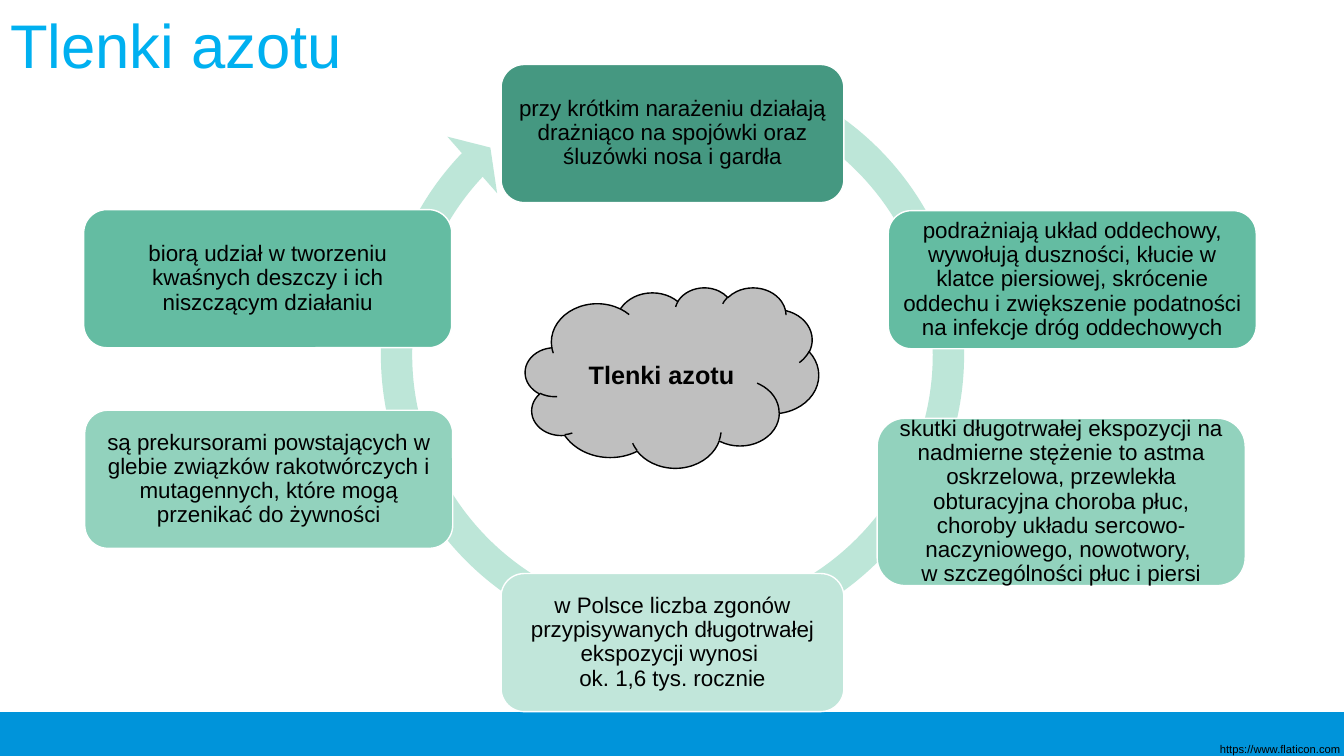
"""Build the slide on the effects of nitrogen oxides."""
import pptx
import pptx.dml.color
import pptx.enum.shapes
import pptx.enum.text
import pptx.util

Inches = pptx.util.Inches
Pt = pptx.util.Pt
RGBColor = pptx.dml.color.RGBColor
MSO_SHAPE = pptx.enum.shapes.MSO_SHAPE
MSO_ANCHOR = pptx.enum.text.MSO_ANCHOR
MSO_AUTO_SIZE = pptx.enum.text.MSO_AUTO_SIZE
PP_ALIGN = pptx.enum.text.PP_ALIGN

BLACK = RGBColor(0x00, 0x00, 0x00)
WHITE = RGBColor(0xFF, 0xFF, 0xFF)
TITLE_BLUE = RGBColor(0x00, 0xB0, 0xF0)
FOOTER_BLUE = RGBColor(0x00, 0x94, 0xDA)
CLOUD_GREY = RGBColor(0xBF, 0xBF, 0xBF)
ARROW_GREEN = RGBColor(0xBD, 0xE6, 0xD8)
GREEN_1 = RGBColor(0x45, 0x98, 0x81)
GREEN_2 = RGBColor(0x64, 0xBC, 0xA2)
GREEN_3 = RGBColor(0x92, 0xD2, 0xBD)
GREEN_4 = RGBColor(0xC1, 0xE6, 0xDA)

EFFECTS = [
    ((4.97, 0.64, 3.4, 1.37), GREEN_1,
     "przy krótkim narażeniu działają drażniąco na spojówki oraz "
     "śluzówki nosa i gardła"),
    ((8.81, 2.09, 3.65, 1.37), GREEN_2,
     "podrażniają układ oddechowy, wywołują duszności, kłucie w klatce "
     "piersiowej, skrócenie oddechu i zwiększenie podatności na infekcje "
     "dróg oddechowych"),
    ((8.7, 4.15, 3.65, 1.66), GREEN_3,
     "skutki długotrwałej ekspozycji na nadmierne stężenie to astma "
     "oskrzelowa, przewlekła obturacyjna choroba płuc, choroby układu "
     "sercowo-naczyniowego, nowotwory, \nw szczególności płuc i piersi"),
    ((4.97, 5.69, 3.4, 1.37), GREEN_4,
     "w Polsce liczba zgonów przypisywanych długotrwałej ekspozycji "
     "wynosi \nok. 1,6 tys. rocznie"),
    ((0.84, 4.07, 3.65, 1.37), GREEN_3,
     "są prekursorami powstających w glebie związków rakotwórczych i "
     "mutagennych, które mogą przenikać do żywności"),
    ((0.83, 2.08, 3.65, 1.37), GREEN_2,
     "biorą udział w tworzeniu kwaśnych deszczy i ich niszczącym działaniu"),
]


def set_text(tf, text, size, color, align, bold=False, spacing=1.0):
    """Write one formatted paragraph into a text frame."""
    p = tf.paragraphs[0]
    p.text = text
    p.alignment = align
    p.line_spacing = spacing
    p.font.name = "Arial"
    p.font.size = Pt(size)
    p.font.bold = bold
    p.font.color.rgb = color


def add_shape(slide, kind, box, fill, line=None):
    """Add a filled preset shape without a shadow."""
    sp = slide.shapes.add_shape(kind, *map(Inches, box))
    sp.shadow.inherit = False
    sp.fill.solid()
    sp.fill.fore_color.rgb = fill
    if line is None:
        sp.line.fill.background()
    else:
        sp.line.color.rgb = line
        sp.line.width = Pt(1)
    return sp


def add_title(slide, text):
    """Place and format the title placeholder."""
    sp = slide.shapes.title
    sp.left, sp.top, sp.width, sp.height = map(Inches, (0, 0.02, 13.33, 0.84))
    tf = sp.text_frame
    tf.auto_size = MSO_AUTO_SIZE.NONE
    tf.vertical_anchor = MSO_ANCHOR.TOP
    set_text(tf, text, 44, TITLE_BLUE, PP_ALIGN.LEFT)


def add_source(slide, text):
    """Add the small web address in the footer."""
    sp = slide.shapes.add_textbox(*map(Inches, (12, 7.32, 1.42, 0.24)))
    tf = sp.text_frame
    tf.word_wrap = False
    tf.auto_size = MSO_AUTO_SIZE.SHAPE_TO_FIT_TEXT
    set_text(tf, text, 8, BLACK, PP_ALIGN.LEFT)


def add_cycle_arrow(slide):
    """Add the circular arrow that links the effects."""
    sp = add_shape(slide, MSO_SHAPE.CIRCULAR_ARROW,
                   (3.56, 0.41, 6.22, 6.22), ARROW_GREEN)
    for i, value in enumerate((0.05, 3.13, 134.09, 176.25, 0.06)):
        sp.adjustments[i] = value


def add_effect(slide, box, fill, text):
    """Add one rounded box describing an effect."""
    sp = add_shape(slide, MSO_SHAPE.ROUNDED_RECTANGLE, box, fill, WHITE)
    tf = sp.text_frame
    tf.word_wrap = True
    tf.vertical_anchor = MSO_ANCHOR.MIDDLE
    tf.margin_left = tf.margin_right = Inches(0.07)
    tf.margin_top = tf.margin_bottom = Inches(0.07)
    set_text(tf, text, 16, BLACK, PP_ALIGN.CENTER, spacing=0.9)


def add_cloud(slide, text):
    """Add the central cloud with its label."""
    sp = add_shape(slide, MSO_SHAPE.CLOUD, (5.21, 2.85, 2.91, 1.79),
                   CLOUD_GREY, BLACK)
    tf = sp.text_frame
    tf.vertical_anchor = MSO_ANCHOR.MIDDLE
    set_text(tf, text, 18, BLACK, PP_ALIGN.CENTER, bold=True, spacing=1.07)
    tf.paragraphs[0].space_after = Pt(8)


def main():
    """Assemble the slide and save it."""
    prs = pptx.Presentation()
    prs.slide_width = Inches(13.33)
    prs.slide_height = Inches(7.5)
    slide = prs.slides.add_slide(prs.slide_layouts[5])
    add_title(slide, "Tlenki azotu")
    add_shape(slide, MSO_SHAPE.RECTANGLE, (0, 7.07, 13.33, 0.43),
              FOOTER_BLUE, FOOTER_BLUE)
    add_source(slide, "https://www.flaticon.com")
    add_cycle_arrow(slide)
    for box, fill, text in EFFECTS:
        add_effect(slide, box, fill, text)
    add_cloud(slide, "Tlenki azotu")
    prs.save("out.pptx")


if __name__ == "__main__":
    main()
